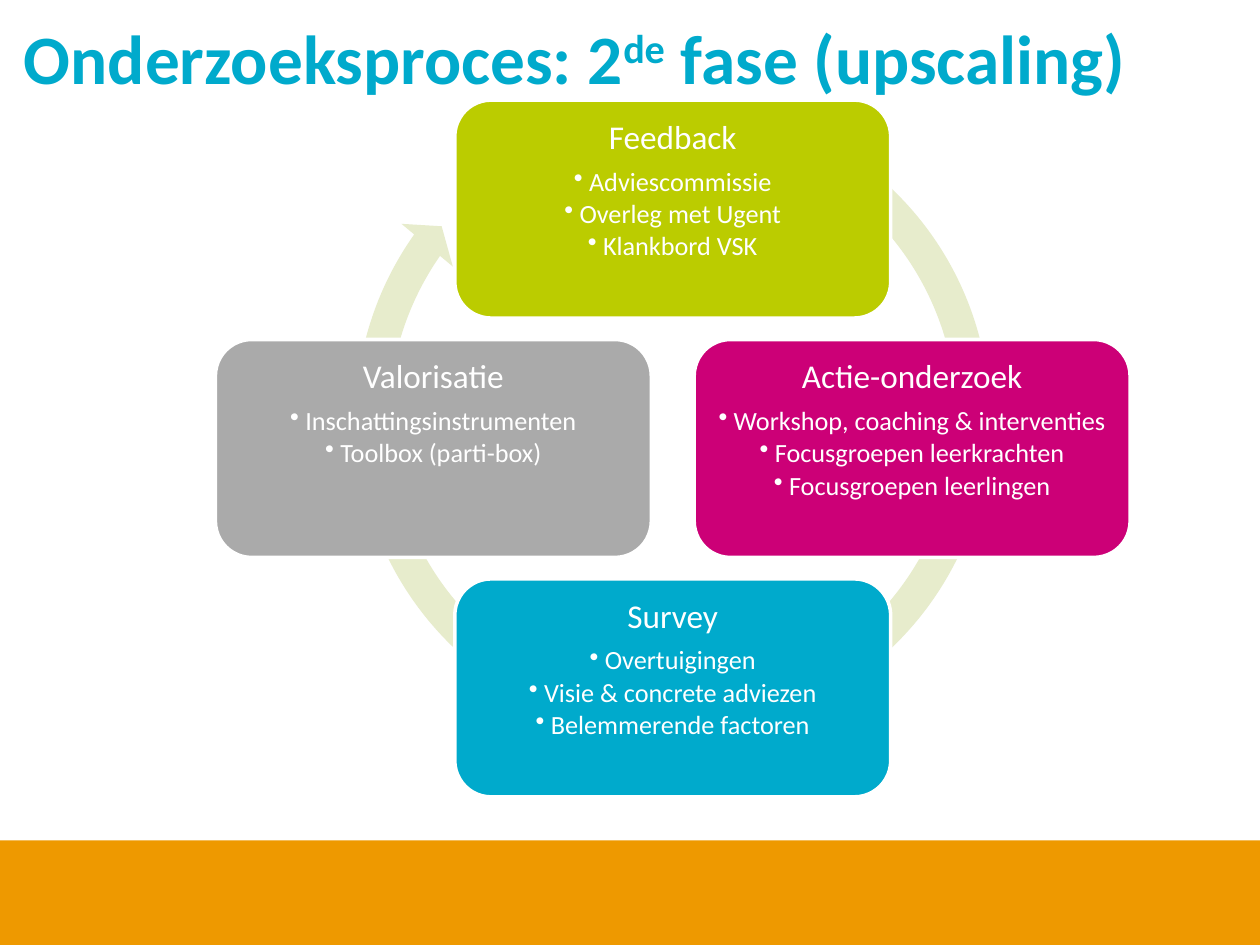
from dataclasses import dataclass

from lxml.etree import SubElement
from pptx import Presentation
from pptx.dml.color import RGBColor
from pptx.enum.shapes import MSO_SHAPE
from pptx.enum.text import MSO_ANCHOR, MSO_AUTO_SIZE, PP_ALIGN
from pptx.oxml.ns import qn
from pptx.util import Inches, Pt


@dataclass(frozen=True)
class Theme:
    """Colours, font and type sizes of the slide."""
    font: str = "Calibri"
    white: str = "FFFFFF"
    blue: str = "00AACC"
    green: str = "BBCC00"
    pink: str = "CC0077"
    grey: str = "AAAAAA"
    orange: str = "EE9900"
    ring: str = "E7ECCC"
    title_size: float = 39.6
    heading_size: float = 19
    bullet_size: float = 15


THEME = Theme()
CENTER_X, CENTER_Y = 5.34, 3.56
OFFSET = 1.9
BOX_W, BOX_H = 3.46, 1.73
RING_SIZE = 5.3
RING_ADJUSTMENTS = (0.05, 2.73, 129.1, 179.78, 0.05)
PHASES = [
    (0, -1, THEME.green, "Feedback",
     ["Adviescommissie", "Overleg met Ugent", "Klankbord VSK"]),
    (1, 0, THEME.pink, "Actie-onderzoek",
     ["Workshop, coaching & interventies", "Focusgroepen leerkrachten",
      "Focusgroepen leerlingen"]),
    (0, 1, THEME.blue, "Survey",
     ["Overtuigingen", "Visie & concrete adviezen", "Belemmerende factoren"]),
    (-1, 0, THEME.grey, "Valorisatie",
     ["Inschattingsinstrumenten", "Toolbox (parti-box)"]),
]


def style_font(font, size, color, bold=False):
    """Apply the theme font with a size and colour."""
    font.name = THEME.font
    font.size = Pt(size)
    font.bold = bold
    font.color.rgb = RGBColor.from_string(color)


def add_filled(s, kind, left, top, width, height, color):
    """Add a flat preset shape without an outline."""
    sp = s.shapes.add_shape(kind, Inches(left), Inches(top), Inches(width), Inches(height))
    sp.shadow.inherit = False
    sp.fill.solid()
    sp.fill.fore_color.rgb = RGBColor.from_string(color)
    sp.line.fill.background()
    return sp


def set_margins(tf, inset):
    """Give a text frame the same inset on all sides."""
    tf.margin_left = tf.margin_top = tf.margin_right = tf.margin_bottom = Inches(inset)


def add_title(s):
    """Fill the title placeholder, with the ordinal suffix raised."""
    sp = s.shapes.title
    sp.left, sp.top, sp.width, sp.height = (Inches(v) for v in (0.19, -0.46, 8.98, 1.25))
    tf = sp.text_frame
    tf.word_wrap = True
    tf.auto_size = MSO_AUTO_SIZE.NONE
    tf.vertical_anchor = MSO_ANCHOR.BOTTOM
    set_margins(tf, 0)
    p = tf.paragraphs[0]
    p.alignment = PP_ALIGN.LEFT
    p.line_spacing = 0.9
    for text in ("Onderzoeksproces: 2", "de", " fase (upscaling)"):
        r = p.add_run()
        r.text = text
        style_font(r.font, THEME.title_size, THEME.blue, bold=True)
    p.runs[1]._r.get_or_add_rPr().set("baseline", "30000")


def add_ring(s):
    """Add the circular arrow behind the phases."""
    sp = add_filled(s, MSO_SHAPE.CIRCULAR_ARROW, CENTER_X - RING_SIZE / 2,
                    CENTER_Y - 0.24 - RING_SIZE / 2, RING_SIZE, RING_SIZE, THEME.ring)
    for i, value in enumerate(RING_ADJUSTMENTS):
        sp.adjustments[i] = value


def format_paragraph(p, size, after):
    """Centre a paragraph and set its spacing and font."""
    p.alignment = PP_ALIGN.CENTER
    p.line_spacing = 0.9
    p.space_after = Pt(size * after)
    for r in p.runs:
        style_font(r.font, size, THEME.white)


def add_bullet(tf, text):
    """Append a bulleted line with a hanging indent."""
    p = tf.add_paragraph()
    p.text = text
    p.level = 1
    format_paragraph(p, THEME.bullet_size, 0.15)
    pPr = p._p.get_or_add_pPr()
    pPr.set("marL", str(Inches(0.12)))
    pPr.set("indent", str(-Inches(0.12)))
    SubElement(pPr, qn("a:buChar")).set("char", "•")


def add_phase(s, column, row, color, heading, bullets):
    """Add one rounded box with a heading and bullets."""
    sp = add_filled(s, MSO_SHAPE.ROUNDED_RECTANGLE,
                    CENTER_X + column * OFFSET - BOX_W / 2,
                    CENTER_Y + row * OFFSET - BOX_H / 2, BOX_W, BOX_H, color)
    sp.line.color.rgb = RGBColor.from_string(THEME.white)
    sp.line.width = Pt(2)
    tf = sp.text_frame
    tf.word_wrap = True
    tf.vertical_anchor = MSO_ANCHOR.TOP
    set_margins(tf, 0.08)
    tf.text = heading
    format_paragraph(tf.paragraphs[0], THEME.heading_size, 0.35)
    for text in bullets:
        add_bullet(tf, text)


def main():
    """Build and save the slide."""
    prs = Presentation()
    prs.slide_width, prs.slide_height = Inches(10), Inches(7.5)
    s = prs.slides.add_slide(prs.slide_layouts[5])
    add_filled(s, MSO_SHAPE.RECTANGLE, 0, 6.67, 10, 0.83, THEME.orange)
    add_title(s)
    add_ring(s)
    for phase in PHASES:
        add_phase(s, *phase)
    prs.save("out.pptx")


if __name__ == "__main__":
    main()
